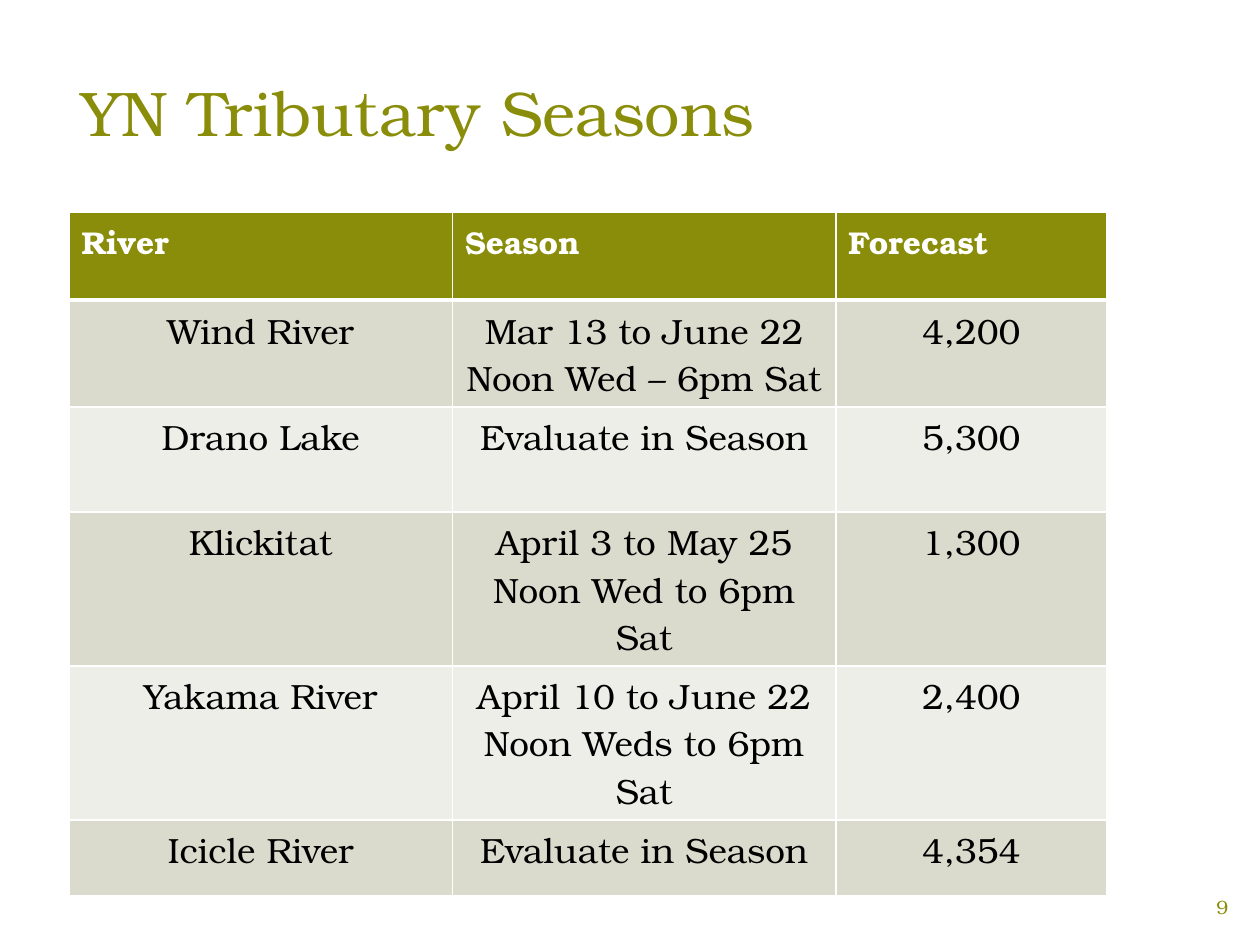
from lxml.etree import SubElement as Sub
from pptx import Presentation
from pptx.dml.color import RGBColor as Rgb
from pptx.enum.text import MSO_ANCHOR as Anchor, PP_ALIGN as Align
from pptx.oxml.ns import qn
from pptx.util import Cm, Pt

TITLE = "YN Tributary Seasons"
PAGE = "9"
ROWS = [
    ("River", "Season", "Forecast"),
    ("Wind River", "Mar 13 to June 22\nNoon Wed – 6pm Sat", "4,200"),
    ("Drano Lake", "Evaluate in Season", "5,300"),
    ("Klickitat", "April 3 to May 25\nNoon Wed to 6pm Sat", "1,300"),
    ("Yakama River", "April 10 to June 22\nNoon Weds to 6pm Sat", "2,400"),
    ("Icicle River", "Evaluate in Season", "4,354"),
]
WIDTHS = [7.73, 7.73, 5.46]
HEIGHTS = [1.78, 2.12, 2.12, 2.12, 2.12, 1.53]
LEFT, TOP = 1.39, 4.27
FONT = "TeX Gyre Bonum"
COLORS = {"olive": "8A8D09", "white": "FFFFFF", "black": "000000",
          "dark": "DADBCC", "light": "EDEEE7"}
STYLES = {
    "title": {"size": Pt(36), "bold": False, "color": "olive", "align": Align.LEFT},
    "page": {"size": Pt(11), "bold": False, "color": "olive", "align": Align.CENTER},
    "head": {"size": Pt(18), "bold": True, "color": "white", "align": Align.LEFT},
    "body": {"size": Pt(20), "bold": False, "color": "black", "align": Align.CENTER},
}


def rgb(name):
    """Return the named colour."""
    return Rgb.from_string(COLORS[name])


def write(frame, text, style):
    """Put styled text in a frame."""
    look = STYLES[style]
    frame.text = text
    frame.word_wrap = True
    for para in frame.paragraphs:
        para.alignment = look["align"]
        for run in para.runs:
            for key in ("size", "bold"):
                setattr(run.font, key, look[key])
            run.font.name = FONT
            run.font.color.rgb = rgb(look["color"])


def edge(cell, base):
    """Draw white cell borders with a given bottom width."""
    props = cell._tc.get_or_add_tcPr()
    for side, width in {"L": 1, "R": 1, "T": 1, "B": base}.items():
        line = Sub(props, qn(f"a:ln{side}"), w=str(Pt(width)))
        fill = Sub(line, qn("a:solidFill"))
        Sub(fill, qn("a:srgbClr"), val=COLORS["white"])


def place(shape, left, top, width, height):
    """Set a shape's box in centimetres."""
    box = {"left": left, "top": top, "width": width, "height": height}
    for key, value in box.items():
        setattr(shape, key, Cm(value))


def grid(slide):
    """Build the seasons table."""
    size = [Cm(v) for v in (LEFT, TOP, sum(WIDTHS), sum(HEIGHTS))]
    table = slide.shapes.add_table(len(ROWS), len(WIDTHS), *size).table
    for col, width in zip(table.columns, WIDTHS):
        col.width = Cm(width)
    for i, (row, height) in enumerate(zip(table.rows, HEIGHTS)):
        row.height = Cm(height)
        shade = "olive" if i == 0 else "dark" if i % 2 else "light"
        for cell, text in zip(row.cells, ROWS[i]):
            write(cell.text_frame, text, "body" if i else "head")
            edge(cell, 1 if i else 3)
            cell.fill.solid()
            cell.fill.fore_color.rgb = rgb(shade)


def main():
    """Build and save the slide."""
    deck = Presentation()
    deck.slide_width, deck.slide_height = Cm(25.4), Cm(19.05)
    slide = deck.slides.add_slide(deck.slide_layouts[5])
    title = slide.shapes.title
    place(title, 1.39, 1.35, 19.33, 3.1)
    write(title.text_frame, TITLE, "title")
    title.text_frame.vertical_anchor = Anchor.TOP
    grid(slide)
    page = slide.shapes.add_textbox(0, 0, 0, 0)
    place(page, 23.88, 17.78, 1.52, 1.02)
    write(page.text_frame, PAGE, "page")
    page.text_frame.vertical_anchor = Anchor.MIDDLE
    deck.save("out.pptx")


if __name__ == "__main__":
    main()
